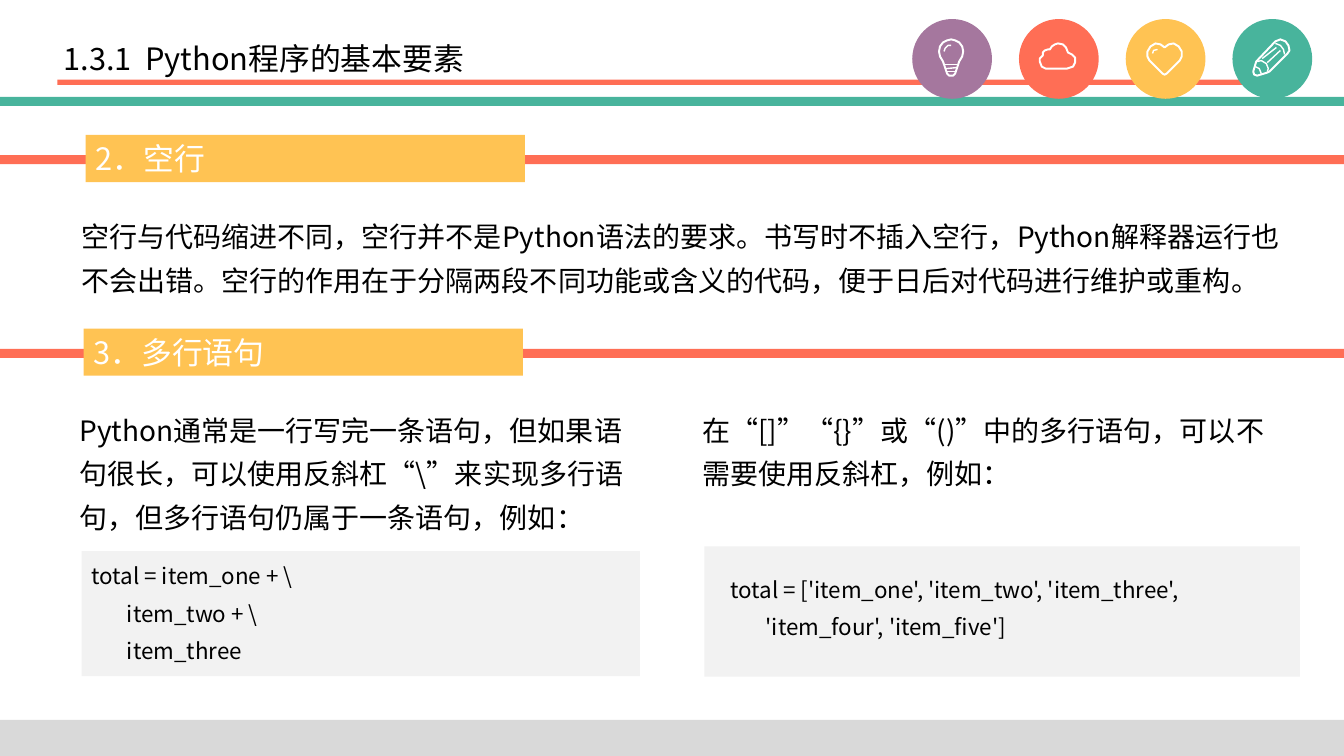
"""Builds the slide on blank lines and multi-line statements in Python."""
from lxml import etree
from pptx import Presentation
from pptx.dml.color import RGBColor
from pptx.enum.shapes import MSO_SHAPE
from pptx.enum.text import MSO_ANCHOR, PP_ALIGN
from pptx.oxml.ns import qn
from pptx.util import Cm, Pt

RECTANGLE, OVAL = MSO_SHAPE.RECTANGLE, MSO_SHAPE.OVAL
TOP, MIDDLE = MSO_ANCHOR.TOP, MSO_ANCHOR.MIDDLE
LEFT, JUSTIFY = PP_ALIGN.LEFT, PP_ALIGN.JUSTIFY
CORAL = RGBColor(0xFF, 0x6E, 0x55)
TEAL = RGBColor(0x48, 0xB4, 0x9C)
PURPLE = RGBColor(0xA5, 0x77, 0x9E)
YELLOW = RGBColor(0xFF, 0xC3, 0x53)
PALE_GREY = RGBColor(0xF2, 0xF2, 0xF2)
FOOTER_GREY = RGBColor(0xD9, 0xD9, 0xD9)
BLACK = RGBColor(0, 0, 0)
WHITE = RGBColor(0xFF, 0xFF, 0xFF)
FONT = "Noto Sans CJK SC"
SLIDE_WIDTH = 33.87

presentation = Presentation()
presentation.slide_width, presentation.slide_height = Cm(SLIDE_WIDTH), Cm(19.05)
slide = presentation.slides.add_slide(presentation.slide_layouts[6])


def add_block(left, top, width, height, color, kind=RECTANGLE):
    shape = slide.shapes.add_shape(kind, Cm(left), Cm(top), Cm(width), Cm(height))
    shape.shadow.inherit = False
    shape.fill.solid()
    shape.fill.fore_color.rgb = color
    shape.line.fill.background()
    return shape


def add_text(text, left, top, width, height, size=20, color=BLACK, spacing=1.0,
             align=LEFT, anchor=TOP, indent=0):
    frame = slide.shapes.add_textbox(Cm(left), Cm(top), Cm(width), Cm(height)).text_frame
    frame.word_wrap = True
    frame.vertical_anchor = anchor
    for index, line in enumerate(text.split("\n")):
        paragraph = frame.paragraphs[0] if index == 0 else frame.add_paragraph()
        paragraph.alignment = align
        paragraph.line_spacing = spacing
        if index and indent:
            paragraph._p.get_or_add_pPr().set("marL", str(Cm(indent)))
        run = paragraph.add_run()
        run.text = line
        run.font.size = Pt(size)
        run.font.name = FONT
        run.font.color.rgb = color
        etree.SubElement(run._r.get_or_add_rPr(), qn("a:ea")).set("typeface", FONT)


add_block(1.45, 2.01, 31.32, 0.13, CORAL)
add_block(0, 2.44, SLIDE_WIDTH, 0.23, TEAL)

bulb_half = [(0, -18), (4, -17), (8, -15), (11, -11), (12, -6), (11, -1),
             (8, 4), (6, 10), (4, 16), (2, 18), (0, 18)]
heart_half = [(0, -10), (4, -13), (9, -14), (14, -11), (17, -6), (17, -1),
              (15, 3), (2, 16), (0, 17)]
bulb, heart = [half + [(-x, y) for x, y in half[-2:0:-1]]
               for half in (bulb_half, heart_half)]
cloud = [(-12, 11), (-16, 9), (-18, 4), (-18, 1), (-15, -2), (-15, -5), (-13, -7),
         (-10, -8), (-8, -8), (-6, -11), (-3, -13), (0, -14), (5, -13), (8, -10),
         (10, -5), (14, -3), (17, 0), (17, 5), (15, 9), (9, 11)]
pencil = [(-18, 14), (-15, 4), (4, -16), (9, -18), (14, -16), (17, -12), (18, -7),
          (16, -4), (-2, 14), (-4, 15), (-14, 18), (-17, 17)]
icons = [
    (PURPLE, bulb, [[(-7, 7), (7, 7)], [(-5, 11), (5, 10)], [(-4, 14), (4, 14)],
                    [(-7, -6), (-6, -9), (-3, -12), (0, -12)]]),
    (CORAL, cloud, []),
    (YELLOW, heart, [[(-12, -4), (-11, -7), (-7, -8)]]),
    (TEAL, pencil, [[(4, -14), (9, -12), (12, -8), (13, -3)],
                    [(-9, 1), (5, -10)], [(-4, 5), (9, -7)],
                    [(-14, 4), (-10, 3), (-5, 6), (-3, 11), (-4, 14)],
                    [(-16, 9), (-12, 11), (-10, 16)]]),
]
for index, (color, outline, details) in enumerate(icons):
    circle_left = 22.99 + 2.69 * index
    add_block(circle_left, 0.48, 2.01, 2.01, color, OVAL)
    for stroke in [outline] + details:
        builder = slide.shapes.build_freeform(*stroke[0], scale=Cm(0.0254))
        builder.add_line_segments(stroke[1:], close=stroke is outline)
        icon = builder.convert_to_shape(Cm(circle_left + 0.98), Cm(1.45))
        icon.shadow.inherit = False
        icon.fill.background()
        icon.line.color.rgb = WHITE
        icon.line.width = Pt(1.4 if stroke is outline else 1)

add_text("1.3.1  Python程序的基本要素", 1.35, 0.91, 19.2, 1.22,
         size=22, spacing=0.9, anchor=MIDDLE)

for heading, left, top in [("2．空行", 2.16, 3.4), ("3．多行语句", 2.11, 8.28)]:
    add_block(0, top + 0.51, SLIDE_WIDTH, 0.23, CORAL)
    add_block(left, top, 11.07, 1.19, YELLOW)
    add_text(heading, left, top, 11.07, 1.19, size=22, color=WHITE)

body_texts = [
    ("空行与代码缩进不同，空行并不是Python语法的要求。书写时不插入空行，Python解释器运行"
     "也不会出错。空行的作用在于分隔两段不同功能或含义的代码，便于日后对代码进行维护或重构。",
     1.8, 5.16, 30.96, 2.36),
    ("Python通常是一行写完一条语句，但如果语句很长，可以使用反斜杠“\\”来实现多行语句，"
     "但多行语句仍属于一条语句，例如：", 1.75, 10.03, 14.68, 3.48),
    ("在“[]”“{}”或“()”中的多行语句，可以不需要使用反斜杠，例如：",
     17.45, 10.03, 15.32, 2.36),
]
for text, *box in body_texts:
    add_text(text, *box, spacing=1.3)

code_samples = [
    ("total = item_one + \\\nitem_two + \\\nitem_three",
     (2.06, 13.89, 14.07, 3.15), (2.06, 13.77, 12.62, 3.02)),
    ("total = ['item_one', 'item_two', 'item_three',\n'item_four', 'item_five']",
     (17.75, 13.77, 15.01, 3.28), (18.16, 14.12, 15.34, 2.06)),
]
for code, panel, box in code_samples:
    add_block(*panel, PALE_GREY)
    add_text(code, *box, size=16, spacing=1.4, align=JUSTIFY, indent=0.89)

add_block(0, 18.14, SLIDE_WIDTH, 0.91, FOOTER_GREY)

presentation.save("out.pptx")
